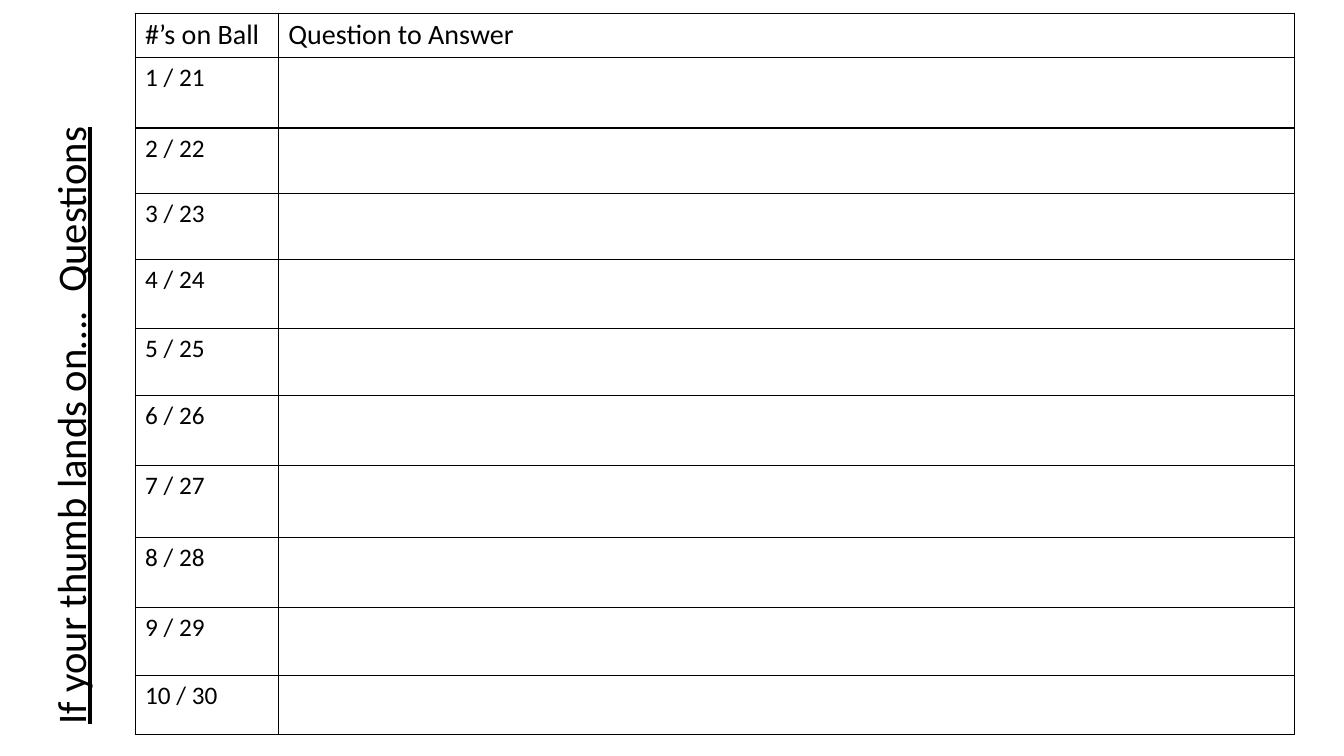
from lxml.etree import SubElement
from pptx import Presentation
from pptx.dml.color import RGBColor
from pptx.enum.text import MSO_ANCHOR, MSO_AUTO_SIZE, PP_ALIGN
from pptx.oxml.ns import qn
from pptx.util import Inches, Pt

COLORS = {"ink": "000000", "paper": "FFFFFF"}
COLUMN_WIDTHS = [1.42, 10.08]
ROW_HEIGHTS = [0.43, 0.7, 0.65, 0.65, 0.69, 0.66, 0.7, 0.71, 0.7, 0.67, 0.59]


def write(frame, text, size=18, underline=False, line_spacing=None):
    paragraph = frame.paragraphs[0]
    paragraph.alignment = PP_ALIGN.LEFT
    paragraph.line_spacing = line_spacing
    run = paragraph.add_run()
    run.text = text
    run.font.name = "Calibri"
    run.font.size = Pt(size)
    run.font.underline = underline
    run.font.color.rgb = RGBColor.from_string(COLORS["ink"])


def add_borders(cell):
    properties = cell._tc.get_or_add_tcPr()
    for side in ("a:lnL", "a:lnR", "a:lnT", "a:lnB"):
        line = SubElement(properties, qn(side), w=str(Pt(1)))
        fill = SubElement(line, qn("a:solidFill"))
        SubElement(fill, qn("a:srgbClr"), val=COLORS["ink"])


prs = Presentation()
prs.slide_width, prs.slide_height = Inches(13.33), Inches(7.5)
slide = prs.slides.add_slide(prs.slide_layouts[5])
slide.background.fill.solid()
slide.background.fill.fore_color.rgb = RGBColor.from_string(COLORS["paper"])

# Question table
questions = slide.shapes.add_table(
    len(ROW_HEIGHTS), len(COLUMN_WIDTHS),
    Inches(1.34), Inches(0.13), Inches(sum(COLUMN_WIDTHS)), Inches(sum(ROW_HEIGHTS)),
).table
questions.first_row = False
questions.horz_banding = False
for column, width in zip(questions.columns, COLUMN_WIDTHS):
    column.width = Inches(width)
for row, height in zip(questions.rows, ROW_HEIGHTS):
    row.height = Inches(height)
for cell in questions.iter_cells():
    add_borders(cell)
    cell.fill.background()

# Headings, then each ball number paired with the one 20 higher
for index, heading in enumerate(["#’s on Ball", "Question to Answer"]):
    write(questions.cell(0, index).text_frame, heading, size=20)
for number in range(1, len(ROW_HEIGHTS)):
    write(questions.cell(number, 0).text_frame, f"{number} / {number + 20}")

# Title running up the left edge
title = slide.shapes.title
title.left, title.top = Inches(-4.23), Inches(1.71)
title.width, title.height = Inches(10.26), Inches(0.89)
title.rotation = 270
title.text_frame.word_wrap = True
title.text_frame.auto_size = MSO_AUTO_SIZE.NONE
title.text_frame.vertical_anchor = MSO_ANCHOR.TOP
write(title.text_frame, "If your thumb lands on….  Questions",
      size=29, underline=True, line_spacing=0.9)

prs.save("out.pptx")
